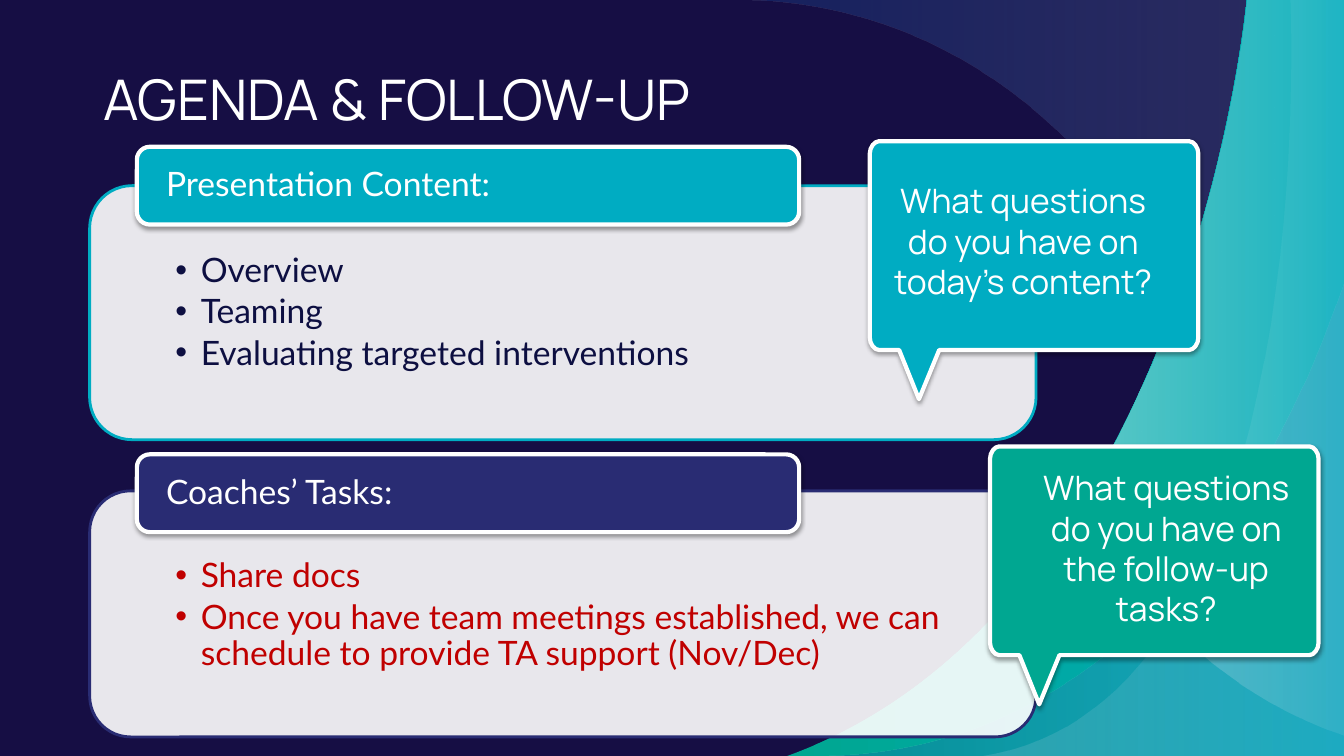
from dataclasses import dataclass

from lxml.etree import SubElement
from pptx import Presentation
from pptx.dml.color import RGBColor
from pptx.enum.shapes import MSO_SHAPE
from pptx.enum.text import MSO_ANCHOR, MSO_AUTO_SIZE, PP_ALIGN
from pptx.oxml.ns import qn
from pptx.util import Cm, Pt

Point = tuple[float, float]
Segment = tuple[Point, ...]  # one point: straight line, three points: Bézier curve


@dataclass(frozen=True)
class Theme:
    night: str = "160E44"
    ink: str = "0D0F41"
    white: str = "FFFFFF"
    cyan: str = "00ACC2"
    green: str = "00A791"
    indigo: str = "292C73"
    red: str = "C00000"
    deep_blue: str = "114CA0"
    pale_blue: str = "8AAFDC"
    heading_font: str = "Manrope"
    list_font: str = "Lato"
    title_size: int = 40
    text_size: int = 24


@dataclass(frozen=True)
class Swoosh:
    start: Point
    segments: list[Segment]
    stops: tuple[tuple[str, int], tuple[str, int]]  # colour and opacity, left to right


@dataclass(frozen=True)
class Section:
    heading: str
    items: list[str]
    accent: str
    ink: str
    top: float
    height: float
    label_top: float


@dataclass(frozen=True)
class Callout:
    question: str
    left: float
    top: float
    fill: str
    margin_left: float
    margin_right: float
    margin_bottom: float


THEME = Theme()
WIDTH, HEIGHT = 33.87, 19.05
EDGE = 36.14
BLUE_VEIL = ((THEME.deep_blue, 29), (THEME.pale_blue, 18))
FORK = (27.43, 12.34)
RIGHT_SIDE = [((EDGE, HEIGHT),), ((EDGE, 0),)]
INNER_ARC = ((31.42, 0), (30.81, 6.73), FORK)

SWOOSHES = [
    Swoosh((33.43, HEIGHT),
           [((33.43, HEIGHT), (31.55, 0), (18.36, 0)), ((34.06, 0),), ((34.06, HEIGHT),)],
           BLUE_VEIL),
    Swoosh((19.84, HEIGHT),
           [*RIGHT_SIDE, ((31.42, 0),), INNER_ARC,
            ((25.7, 15.21), (23.27, 17.81), (19.84, HEIGHT))],
           ((THEME.green, 100), (THEME.cyan, 100))),
    Swoosh(FORK,
           [((29.85, 18.64), (EDGE, HEIGHT), (EDGE, HEIGHT)), ((EDGE, 0),),
            ((31.42, 0),), INNER_ARC],
           ((THEME.white, 36), (THEME.white, 0))),
    Swoosh((32.51, 0),
           [((32.51, 0), (33.38, 17.75), (24.74, HEIGHT)), *RIGHT_SIDE],
           ((THEME.white, 18), (THEME.white, 0))),
    Swoosh((35.51, 0),
           [((35.51, 0), (33.63, HEIGHT), (20.45, HEIGHT)), *RIGHT_SIDE],
           BLUE_VEIL),
]
SECTIONS = [
    Section("Presentation Content:",
            ["Overview", "Teaming", "Evaluating targeted interventions"],
            THEME.cyan, THEME.ink, 4.68, 6.4, 3.7),
    Section("Coaches’ Tasks:",
            ["Share docs", "Once you have team meetings established, "
             "we can schedule to provide TA support (Nov/Dec)"],
            THEME.indigo, THEME.red, 12.37, 6.2, 11.45),
]
CALLOUTS = [
    Callout("What questions do you have on today’s content?", 21.92, 3.56, THEME.cyan,
            0.25, 0.8, 1.74),
    Callout("What questions do you have on the follow-up tasks?", 24.95, 11.25, THEME.green,
            0.84, 0.24, 1.64),
]


def add_outline(slide, start: Point, segments: list[Segment]):
    """Draw a closed outline of straight lines and Bézier curves."""
    points = [(Cm(x), Cm(y)) for x, y in (start, *(p for s in segments for p in s))]
    builder = slide.shapes.build_freeform(*points[0])
    builder.add_line_segments(points[1:], close=True)
    outline = builder.convert_to_shape()
    outline.shadow.inherit = False
    steps = iter(list(outline.element.spPr.iter(qn("a:lnTo"))))
    for segment in segments:
        first, *others = [next(steps) for _ in segment]
        if others:
            first.tag = qn("a:cubicBezTo")
        for step in others:
            first.append(step[0])
            step.getparent().remove(step)
    return outline


def set_opacity(color_element, percent: int) -> None:
    SubElement(color_element, qn("a:alpha"), val=str(percent * 1000))


def paint(shape, fill: str, line: str, line_width: float) -> None:
    shape.shadow.inherit = False
    shape.fill.solid()
    shape.fill.fore_color.rgb = RGBColor.from_string(fill)
    shape.line.color.rgb = RGBColor.from_string(line)
    shape.line.width = Pt(line_width)


def add_soft_shadow(shape) -> None:
    effects = shape.element.spPr.find(qn("a:effectLst"))
    shadow = SubElement(effects, qn("a:outerShdw"), blurRad="40000", dist="20000",
                        dir="5400000", rotWithShape="0")
    set_opacity(SubElement(shadow, qn("a:srgbClr"), val="000000"), 38)


def write(shape, lines: list[str], font: str, size: int, color: str,
          frame_format: dict, paragraph_format: dict, bullet: str = "") -> None:
    frame = shape.text_frame
    for name, value in {"word_wrap": True, "auto_size": MSO_AUTO_SIZE.NONE,
                        **frame_format}.items():
        setattr(frame, name, value)
    for index, line in enumerate(lines):
        paragraph = frame.add_paragraph() if index else frame.paragraphs[0]
        if bullet:
            properties = paragraph._p.get_or_add_pPr()
            properties.set("marL", str(Cm(0.64)))
            properties.set("indent", str(-Cm(0.64)))
            SubElement(properties, qn("a:buChar"), char=bullet)
        for name, value in {"space_before": Pt(0), **paragraph_format}.items():
            setattr(paragraph, name, value)
        run = paragraph.add_run()
        run.text = line
        run.font.name, run.font.size = font, Pt(size)
        run.font.color.rgb = RGBColor.from_string(color)


def margins(left: float, top: float, right: float, bottom: float) -> dict:
    return {"margin_left": Cm(left), "margin_top": Cm(top),
            "margin_right": Cm(right), "margin_bottom": Cm(bottom)}


def place(placeholder, left: float, top: float, width: float, height: float) -> None:
    """Move a placeholder and bring it to the front."""
    box = {"left": left, "top": top, "width": width, "height": height}
    for name, value in box.items():
        setattr(placeholder, name, Cm(value))
    placeholder.element.getparent().append(placeholder.element)


def draw_swoosh(slide, swoosh: Swoosh) -> None:
    outline = add_outline(slide, swoosh.start, swoosh.segments)
    outline.line.fill.background()
    outline.fill.gradient()
    outline.fill.gradient_angle = 0
    for stop, (color, _) in zip(outline.fill.gradient_stops, swoosh.stops):
        stop.color.rgb = RGBColor.from_string(color)
    colors = outline.element.spPr.iter(qn("a:srgbClr"))
    for color_element, (_, opacity) in zip(list(colors), swoosh.stops):
        set_opacity(color_element, opacity)


def draw_section(slide, section: Section, body) -> None:
    left, width, gap = 2.26, 23.85, 0.31
    panel = slide.shapes.add_shape(MSO_SHAPE.ROUNDED_RECTANGLE, Cm(left), Cm(section.top),
                                   Cm(width), Cm(section.height))
    paint(panel, THEME.white, section.accent, 2)
    set_opacity(next(panel.element.spPr.iter(qn("a:srgbClr"))), 90)
    place(body, left + gap, section.top + gap, width - 2 * gap, section.height - 2 * gap)
    write(body, section.items, THEME.list_font, THEME.text_size, section.ink,
          {"vertical_anchor": MSO_ANCHOR.TOP, **margins(1.85, 1.4, 1.85, 0.48)},
          {"line_spacing": 0.9, "space_after": Pt(3.6)}, bullet="•")
    label = slide.shapes.add_shape(MSO_SHAPE.ROUNDED_RECTANGLE, Cm(3.45),
                                   Cm(section.label_top), Cm(16.69), Cm(1.96))
    paint(label, section.accent, THEME.white, 3)
    add_soft_shadow(label)
    write(label, [section.heading], THEME.list_font, THEME.text_size, THEME.white,
          {"vertical_anchor": MSO_ANCHOR.MIDDLE, **margins(0.64, 0, 0.64, 0)},
          {"line_spacing": 0.9, "alignment": PP_ALIGN.LEFT})


def draw_callout(slide, callout: Callout) -> None:
    left, top = callout.left, callout.top
    right, bottom = left + 8.28, top + 5.26
    rx, ry = 0.23, 0.31
    tail = [((left + x, top + y),) for x, y in ((1.75, 5.26), (1.24, 6.5), (0.74, 5.26))]
    bubble = add_outline(slide, (right - rx, top), [
        ((right - rx / 2, top), (right, top + ry / 2), (right, top + ry)),
        ((right, bottom - ry),),
        ((right, bottom - ry / 2), (right - rx / 2, bottom), (right - rx, bottom)),
        *tail,
        ((left + rx, bottom),),
        ((left + rx / 2, bottom), (left, bottom - ry / 2), (left, bottom - ry)),
        ((left, top + ry),),
        ((left, top + ry / 2), (left + rx / 2, top), (left + rx, top)),
    ])
    paint(bubble, callout.fill, THEME.white, 3)
    add_soft_shadow(bubble)
    write(bubble, [callout.question], THEME.heading_font, THEME.text_size, THEME.white,
          {"vertical_anchor": MSO_ANCHOR.MIDDLE,
           **margins(callout.margin_left, 0.25, callout.margin_right, callout.margin_bottom)},
          {"alignment": PP_ALIGN.CENTER})


def main() -> None:
    presentation = Presentation()
    presentation.slide_width, presentation.slide_height = Cm(WIDTH), Cm(HEIGHT)
    slide = presentation.slides.add_slide(presentation.slide_layouts[3])
    slide.background.fill.solid()
    slide.background.fill.fore_color.rgb = RGBColor.from_string(THEME.night)
    title, *bodies = slide.placeholders
    for swoosh in SWOOSHES:
        draw_swoosh(slide, swoosh)
    place(title, 2.28, 1.3, 26.06, 2.34)
    write(title, ["AGENDA & FOLLOW-UP"], THEME.heading_font, THEME.title_size, THEME.white,
          {"vertical_anchor": MSO_ANCHOR.MIDDLE, **margins(0.33, 0.33, 0.33, 0.33)},
          {"alignment": PP_ALIGN.LEFT})
    for section, body in zip(SECTIONS, bodies):
        draw_section(slide, section, body)
    for callout in CALLOUTS:
        draw_callout(slide, callout)
    presentation.save("out.pptx")


if __name__ == "__main__":
    main()
